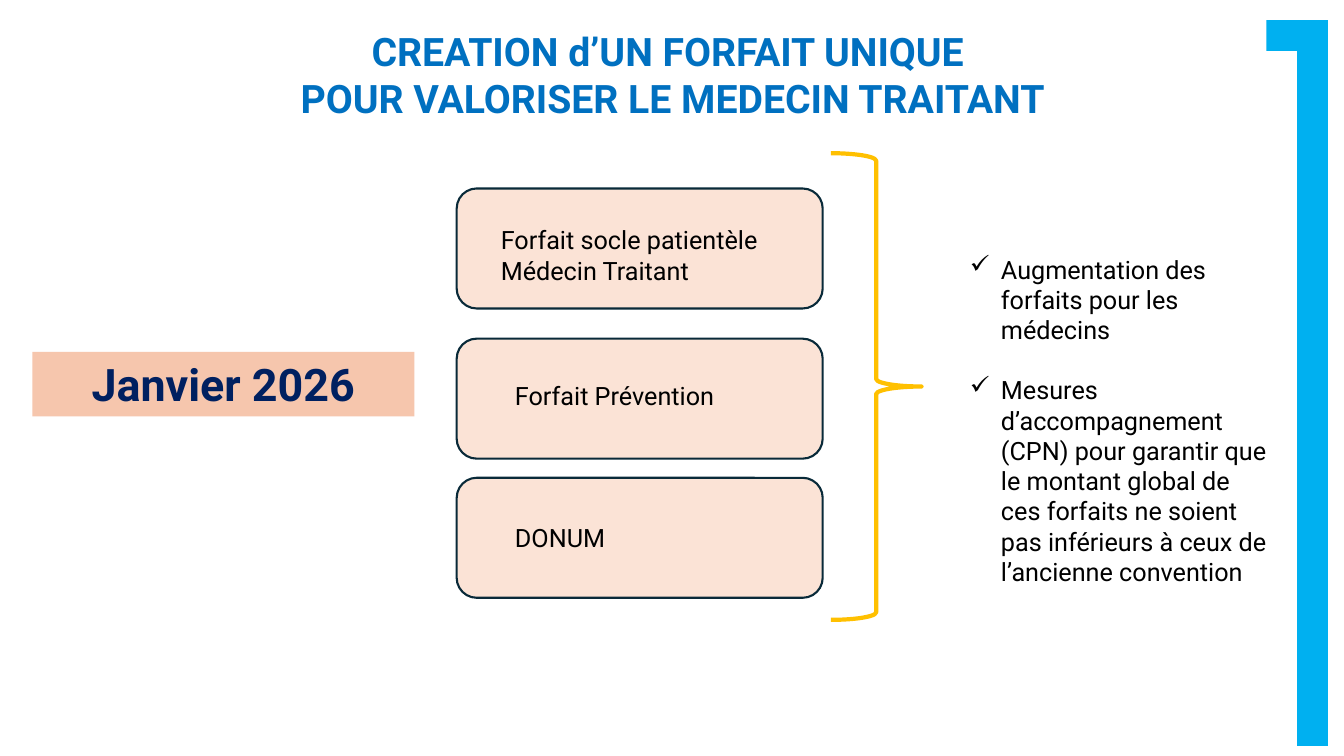
from dataclasses import dataclass

from lxml import etree
from pptx import Presentation
from pptx.dml.color import RGBColor
from pptx.enum.shapes import MSO_SHAPE
from pptx.enum.text import MSO_ANCHOR, PP_ALIGN
from pptx.oxml.ns import qn
from pptx.util import Inches, Pt

CORNER, BRACE = MSO_SHAPE.CORNER, MSO_SHAPE.RIGHT_BRACE
RECTANGLE, ROUNDED = MSO_SHAPE.RECTANGLE, MSO_SHAPE.ROUNDED_RECTANGLE
TOP, MIDDLE = MSO_ANCHOR.TOP, MSO_ANCHOR.MIDDLE
LEFT, CENTER = PP_ALIGN.LEFT, PP_ALIGN.CENTER


@dataclass(frozen=True)
class Theme:
    font: str = "Roboto"
    title: str = "0070C0"
    date: str = "002060"
    date_fill: str = "F6C6AD"
    body: str = "000000"
    card_fill: str = "FBE3D6"
    card_line: str = "092A39"
    corner: str = "00B0F0"
    brace: str = "FFC000"
    title_size: int = 28
    date_size: int = 32
    body_size: int = 18
    card_width: float = 1.5
    brace_width: float = 3


@dataclass(frozen=True)
class Area:
    left: float
    top: float
    width: float
    height: float

    def lengths(self):
        return [Inches(n) for n in (self.left, self.top, self.width, self.height)]


@dataclass(frozen=True)
class Card:
    text: str
    top: float
    indent: float
    inset: float


THEME = Theme()
CARDS = (
    Card("Forfait socle patientèle Médecin Traitant", 1.87, 0.38, 0.30),
    Card("Forfait Prévention", 3.36, 0.52, 0.36),
    Card("DONUM", 4.74, 0.52, 0.38),
)
BENEFITS = (
    "Augmentation des forfaits pour les médecins",
    "Mesures d’accompagnement (CPN) pour garantir que le montant global de ces "
    "forfaits ne soient pas inférieurs à ceux de l’ancienne convention",
)


def add_figure(page, kind, area: Area, fill="", line="", line_width: float = 0):
    """Add a preset shape; an empty colour means no fill or no line."""
    figure = page.shapes.add_shape(kind, *area.lengths())
    figure.shadow.inherit = False
    if fill:
        figure.fill.solid()
        figure.fill.fore_color.rgb = RGBColor.from_string(fill)
    else:
        figure.fill.background()
    if line:
        figure.line.color.rgb = RGBColor.from_string(line)
        figure.line.width = Pt(line_width)
    else:
        figure.line.fill.background()
    return figure


def write(box, text: str, size: int, color: str, bold=False, align=LEFT, anchor=TOP):
    frame = box.text_frame
    frame.text = text
    frame.word_wrap = True
    frame.vertical_anchor = anchor
    for para in frame.paragraphs:
        para.alignment = align
        para.line_spacing = 1.0
        for span in para.runs:
            span.font.name = THEME.font
            span.font.size = Pt(size)
            span.font.bold = bold
            span.font.color.rgb = RGBColor.from_string(color)


def add_title(page) -> None:
    title = page.shapes.title
    title.left, title.top, title.width, title.height = Area(1.26, 0.22, 10.82, 1.04).lengths()
    write(title, "CREATION d’UN FORFAIT UNIQUE \nPOUR VALORISER LE MEDECIN TRAITANT",
          THEME.title_size, THEME.title, bold=True, align=CENTER)


def add_card(page, card: Card) -> None:
    box = add_figure(page, ROUNDED, Area(4.53, card.top, 3.63, 1.19),
                     THEME.card_fill, THEME.card_line, THEME.card_width)
    write(box, card.text, THEME.body_size, THEME.body)
    box.text_frame.margin_left = Inches(card.indent)
    box.text_frame.margin_right = Inches(0.39)
    box.text_frame.margin_top = Inches(card.inset)


def add_checklist(page) -> None:
    box = page.shapes.add_textbox(*Area(9.52, 2.47, 3.23, 4.04).lengths())
    write(box, "\n".join(BENEFITS), THEME.body_size, THEME.body)
    for index, para in enumerate(box.text_frame.paragraphs):
        para.space_before = Pt(21.5 if index else 0)
        properties = para._p.get_or_add_pPr()
        properties.set("marL", str(Inches(0.31)))
        properties.set("indent", str(-Inches(0.31)))
        etree.SubElement(properties, qn("a:buChar"), char="✓")


def main() -> None:
    deck = Presentation()
    deck.slide_width, deck.slide_height = Inches(13.33), Inches(7.5)
    page = deck.slides.add_slide(deck.slide_layouts.get_by_name("Title Only"))

    add_title(page)
    corner = add_figure(page, CORNER, Area(12.56, 0.2, 0.61, 7.2), THEME.corner)
    corner.rotation = 180
    date = add_figure(page, RECTANGLE, Area(0.32, 3.49, 3.79, 0.64), THEME.date_fill)
    write(date, "Janvier 2026", THEME.date_size, THEME.date,
          bold=True, align=CENTER, anchor=MIDDLE)
    for card in CARDS:
        add_card(page, card)
    add_figure(page, BRACE, Area(8.24, 1.52, 0.9, 4.63),
               line=THEME.brace, line_width=THEME.brace_width)
    add_checklist(page)
    deck.save("out.pptx")


if __name__ == "__main__":
    main()
